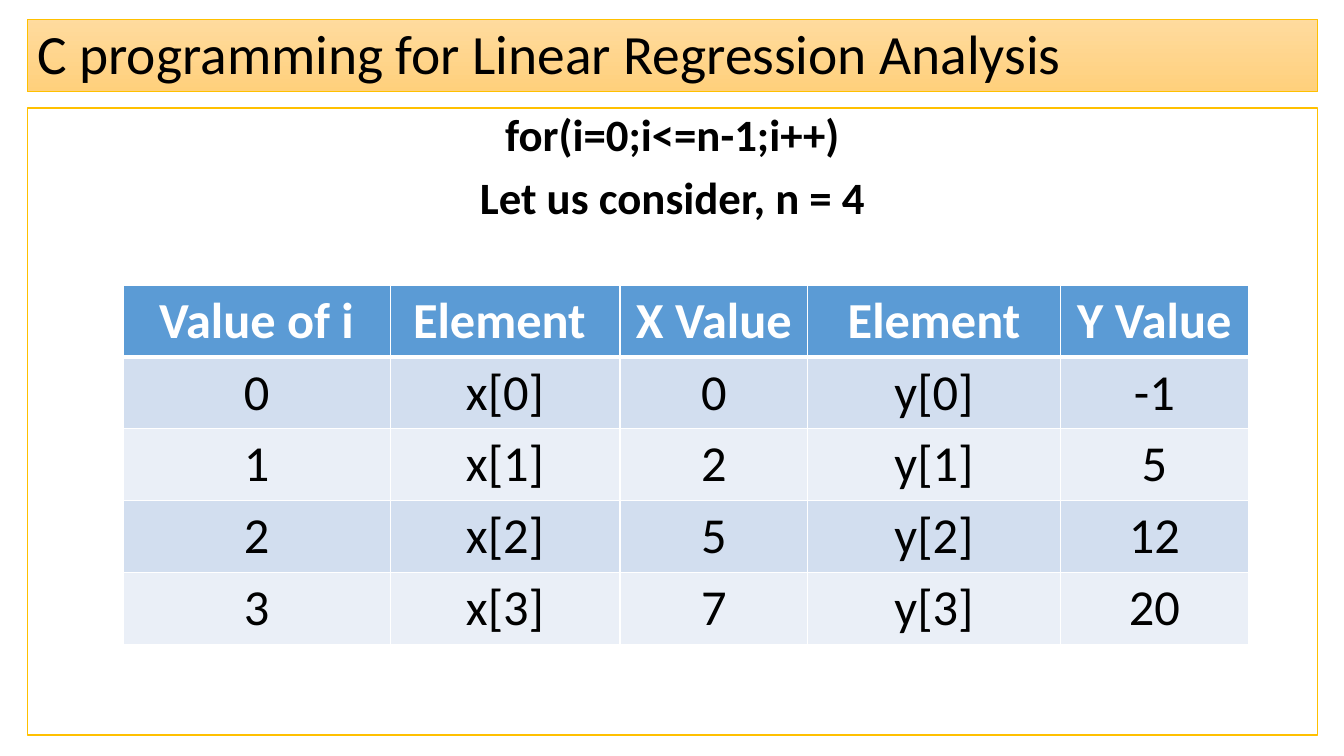
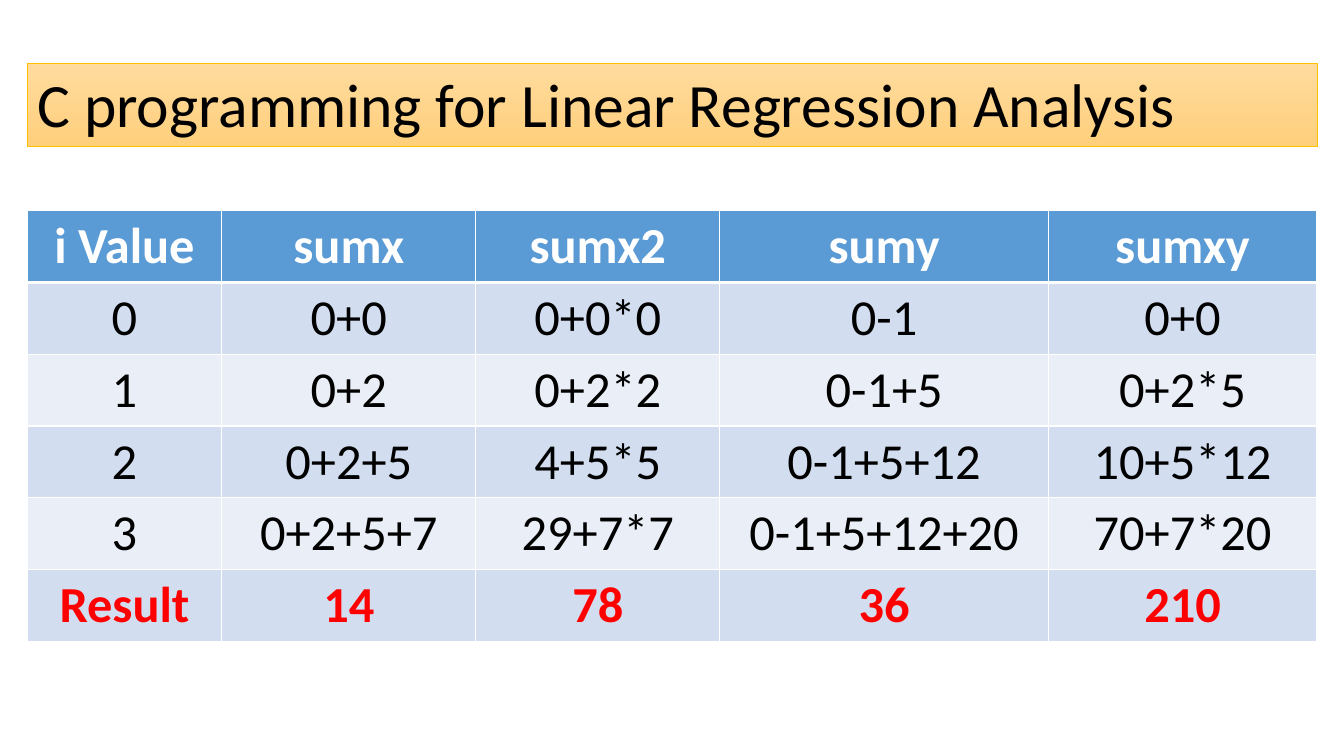
from pptx import Presentation
from pptx import util as u
from pptx.dml.color import RGBColor
from pptx.enum import text
from pptx.oxml import parse_xml
from pptx.oxml.ns import nsdecls

# Style
PX = 9144  # EMU per px, 100 px to the inch
FONT = "Calibri"
BLACK = RGBColor(0, 0, 0)
WHITE = RGBColor(255, 255, 255)
RED = RGBColor(255, 0, 0)
GOLD = RGBColor(0xFF, 0xC0, 0x00)
PEACH = RGBColor(0xFF, 0xDB, 0x9E)
AMBER = RGBColor(0xFF, 0xD0, 0x7C)
BLUE = RGBColor(0x5B, 0x9B, 0xD5)
BANDS = RGBColor(0xEA, 0xEF, 0xF7), RGBColor(0xD2, 0xDE, 0xEF)
LEFT, WIDE, ROW = 27, 1280, 71
HEAD = "C programming for Linear Regression Analysis"


class Deck:
    def __init__(self):
        self.prs = Presentation()
        self.prs.slide_width = u.Emu(1333 * PX)
        self.prs.slide_height = u.Emu(750 * PX)

    def page(self, layout):
        self.slide = self.prs.slides.add_slide(self.prs.slide_layouts[layout])

    def place(self, shape, top, high, edge):
        shape.left, shape.top = LEFT * PX, top * PX
        shape.width, shape.height = WIDE * PX, high * PX
        shape.line.color.rgb = GOLD
        shape.line.width = u.Pt(edge)
        shape.text_frame.word_wrap = True
        shape.text_frame.auto_size = text.MSO_AUTO_SIZE.NONE

    def style(self, par, size, color, bold, align=text.PP_ALIGN.CENTER):
        par.alignment = align
        for run in par.runs:
            font = run.font
            font.name, font.size, font.bold = FONT, u.Pt(size), bold
            font.color.rgb = color

    def title(self, words, top, high, size):
        shape = self.slide.shapes.title
        self.place(shape, top, high, 0.5)
        shape.fill.gradient()
        shape.fill.gradient_angle = 270
        for stop, color in zip(shape.fill.gradient_stops, (PEACH, AMBER)):
            stop.color.rgb = color
        frame = shape.text_frame
        frame.text = words
        frame.vertical_anchor = text.MSO_ANCHOR.BOTTOM
        par = frame.paragraphs[0]
        par.line_spacing = 0.9
        self.style(par, size, BLACK, False, text.PP_ALIGN.JUSTIFY)

    def body(self, lines, top, high):
        shape = self.slide.placeholders[1]
        self.place(shape, top, high, 1)
        shape.fill.solid()
        shape.fill.fore_color.rgb = WHITE
        frame = shape.text_frame
        frame.text = "\n".join(lines)
        frame.vertical_anchor = text.MSO_ANCHOR.TOP
        for par in frame.paragraphs:
            par.line_spacing, par.space_before = 0.9, u.Pt(10)
            self.style(par, 32, BLACK, True)

    def border(self, cell, base):
        sides = ("L", 1), ("R", 1), ("T", 1), ("B", base)
        for spot, (side, width) in enumerate(sides):
            line = parse_xml(
                f'<a:ln{side} {nsdecls("a")} w="{u.Pt(width)}"><a:solidFill>'
                f'<a:srgbClr val="{WHITE}"/></a:solidFill></a:ln{side}>')
            cell._tc.get_or_add_tcPr().insert(spot, line)

    def table(self, rows, left, top, cols, total=False):
        grid = self.slide.shapes.add_table(
            len(rows), len(cols), left * PX, top * PX,
            sum(cols) * PX, len(rows) * ROW * PX).table
        for col, width in zip(grid.columns, cols):
            col.width = width * PX
        for r, row in enumerate(rows):
            last = total and r == len(rows) - 1
            ink = WHITE if r == 0 else RED if last else BLACK
            for c, words in enumerate(row):
                cell = grid.cell(r, c)
                cell.text = words
                cell.fill.solid()
                cell.fill.fore_color.rgb = BANDS[r % 2] if r else BLUE
                self.style(cell.text_frame.paragraphs[0], 36, ink,
                           r == 0 or last)
                self.border(cell, 1 if r else 3)


def main():
    deck = Deck()

    # Array elements
    xs, ys = (0, 2, 5, 7), (-1, 5, 12, 20)
    deck.page(0)
    deck.title(HEAD, 19, 72, 39.6)
    deck.body(["for(i=0;i<=n-1;i++)", "Let us consider, n = 4"], 107, 622)
    rows = [["Value of i", "Element ", "X Value", "Element", "Y Value"]]
    for i, (x, y) in enumerate(zip(xs, ys)):
        rows.append([str(i), f"x[{i}]", str(x), f"y[{i}]", str(y)])
    deck.table(rows, 122, 283, [265, 228, 186, 251, 186])

    # Running sums
    deck.page(5)
    deck.title(HEAD, 63, 82, 44)
    deck.table([
        ["i Value", "sumx", "sumx2", "sumy", "sumxy"],
        ["0", "0+0", "0+0*0", "0-1", "0+0"],
        ["1", "0+2", "0+2*2", "0-1+5", "0+2*5"],
        ["2", "0+2+5", "4+5*5", "0-1+5+12", "10+5*12"],
        ["3", "0+2+5+7", "29+7*7", "0-1+5+12+20", "70+7*20"],
        ["Result", "14", "78", "36", "210"],
    ], LEFT, 209, [193, 252, 242, 326, 266], total=True)

    deck.prs.save("out.pptx")


if __name__ == "__main__":
    main()
